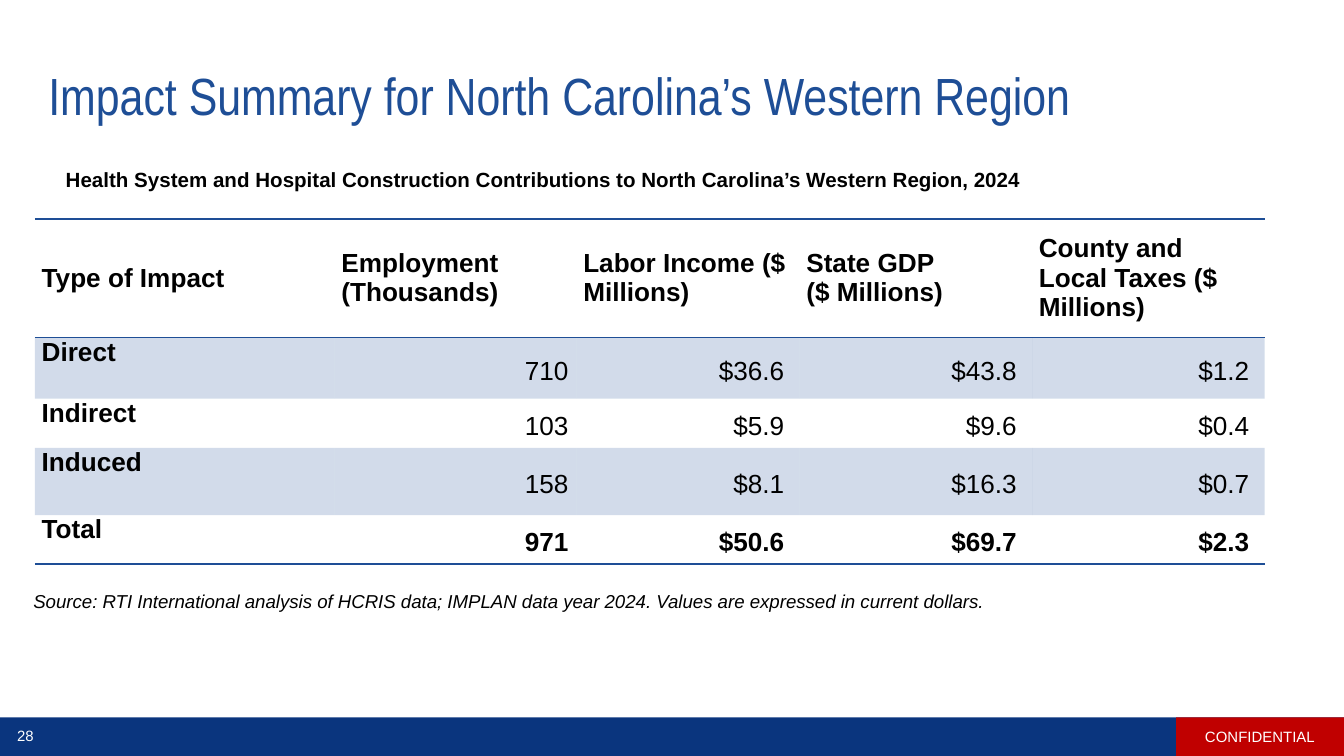
import pptx
import pptx.util
import pptx.dml.color
import pptx.enum.shapes
import pptx.enum.text
import pptx.oxml
import pptx.oxml.ns

Pt = pptx.util.Pt
In = pptx.util.Inches
RGB = pptx.dml.color.RGBColor.from_string
ALIGN = pptx.enum.text.PP_ALIGN
MID = pptx.enum.text.MSO_ANCHOR.MIDDLE
RECT = pptx.enum.shapes.MSO_SHAPE.RECTANGLE

theme = {
    "blue": "1E4E96", "navy": "0A357E", "red": "C00000",
    "ink": "000000", "white": "FFFFFF",
    "head": "Arial Narrow", "body": "Arial",
    "title": 28, "table": 14, "lead": 11, "note": 10, "foot": 8,
}

deck = pptx.Presentation()
deck.slide_width, deck.slide_height = In(10), In(5.625)
slide = deck.slides.add_slide(deck.slide_layouts[5])


def box(left, top, wide, high):
    """Turn percentages of the slide's size into lengths."""
    w, h = deck.slide_width / 100, deck.slide_height / 100
    return [round(v) for v in (left * w, top * h, wide * w, high * h)]


def write(frame, text, size, color="ink", face="body", align=ALIGN.LEFT,
          bold=False, after=0):
    frame.word_wrap = True
    frame.text = text
    par = frame.paragraphs[0]
    par.alignment = align
    par.space_before, par.space_after = Pt(0), Pt(after)
    par.font.size = Pt(theme[size])
    par.font.name = theme[face]
    par.font.bold = bold
    par.font.color.rgb = RGB(theme[color])
    return par


# Footer bar, page number and label
for spot, color, label in [
    ((0, 94.9, 100, 5.1), "navy", ""),
    ((87.5, 94.9, 12.5, 5.1), "red", "CONFIDENTIAL"),
]:
    bar = slide.shapes.add_shape(RECT, *box(*spot))
    bar.shadow.inherit = False
    bar.fill.solid()
    bar.fill.fore_color.rgb = RGB(theme[color])
    bar.line.fill.background()
    if label:
        bar.text_frame.vertical_anchor = MID
        write(bar.text_frame, label, "foot", "white", align=ALIGN.CENTER, after=6)
page = slide.shapes.add_textbox(*box(0, 95.1, 3.8, 4.3)).text_frame
page.vertical_anchor = MID
write(page, "28", "foot", "white", align=ALIGN.CENTER, after=6)

# Title
title = slide.shapes.title
title.left, title.top, title.width, title.height = box(2.6, 7.5, 96.7, 11.2)
frame = title.text_frame
frame.auto_size = pptx.enum.text.MSO_AUTO_SIZE.NONE
frame.vertical_anchor = MID
frame.margin_left = frame.margin_top = frame.margin_bottom = In(0.1)
frame.margin_right = In(0.2)
par = write(frame, "Impact Summary for North Carolina’s Western Region",
            "title", "blue", "head")
par.line_spacing = 0.9

# Table heading and source note
lead = slide.shapes.add_textbox(*box(3.9, 21.2, 96.1, 5.1)).text_frame
write(lead, "Health System and Hospital Construction Contributions to "
      "North Carolina’s Western Region, 2024", "lead", bold=True)
note = slide.shapes.add_textbox(*box(1.5, 77.2, 95.6, 4.8)).text_frame
par = write(note, "Source: RTI International analysis of HCRIS data; IMPLAN data "
            "year 2024. Values are expressed in current dollars.", "note")
par.font.italic = True

# Impact table
rows = [
    ("Type of Impact", "Employment (Thousands)", "Labor Income ($ Millions)",
     "State GDP\v($ Millions)", "County and Local Taxes ($ Millions)"),
    ("Direct", "710", "$36.6 ", "$43.8 ", "$1.2 "),
    ("Indirect", "103", "$5.9 ", "$9.6 ", "$0.4 "),
    ("Induced", "158", "$8.1 ", "$16.3 ", "$0.7 "),
    ("Total", "971", "$50.6 ", "$69.7 ", "$2.3 "),
]
wides = [22.3, 18, 16.6, 17.3, 17.3]
highs = [15.7, 8.1, 6.5, 8.9, 6.5]
last = len(rows) - 1
grid = slide.shapes.add_table(
    len(rows), len(wides), *box(2.6, 28.95, sum(wides), sum(highs)))
table = grid.table
table.first_row = table.horz_banding = False
style = next(grid.element.iter(pptx.oxml.ns.qn("a:tableStyleId")))
style.text = "{2D5ABB26-0587-4C30-8999-92F81FD0307C}"  # no style, no grid
for col, wide in zip(table.columns, wides):
    col.width = box(0, 0, wide, 0)[2]
for row, high in zip(table.rows, highs):
    row.height = box(0, 0, 0, high)[3]

for r, row in enumerate(rows):
    for c, text in enumerate(row):
        cell = table.cell(r, c)
        value = r > 0 and c > 0
        cell.margin_top = cell.margin_bottom = 0
        cell.margin_left = cell.margin_right = In(0.06 if value else 0.05)
        if r == 0 or value:
            cell.vertical_anchor = MID
        par = write(cell.text_frame, text, "table",
                    align=ALIGN.RIGHT if value else ALIGN.LEFT,
                    bold=not value or r == last,
                    after=6 if r == 0 or value else 3)
        if value:
            par.line_spacing = 1.2

        # Pale band on every other row
        if r % 2:
            cell.fill.solid()
            cell.fill.fore_color.rgb = RGB(theme["blue"])
            tint = next(cell.fill._xPr.iter(pptx.oxml.ns.qn("a:srgbClr")))
            tint.append(pptx.oxml.parse_xml(
                f'<a:alpha {pptx.oxml.ns.nsdecls("a")} val="20000"/>'))
        else:
            cell.fill.background()

        # Rules around the header and under the total
        sides = {0: ["lnT", "lnB"], last: ["lnB"]}.get(r, [])
        for n, side in enumerate(sides):
            rule = pptx.oxml.parse_xml(
                f'<a:{side} {pptx.oxml.ns.nsdecls("a")} w="{Pt(1)}"><a:solidFill>'
                f'<a:srgbClr val="{theme["blue"]}"/></a:solidFill></a:{side}>')
            cell.fill._xPr.insert(n, rule)

deck.save("out.pptx")
